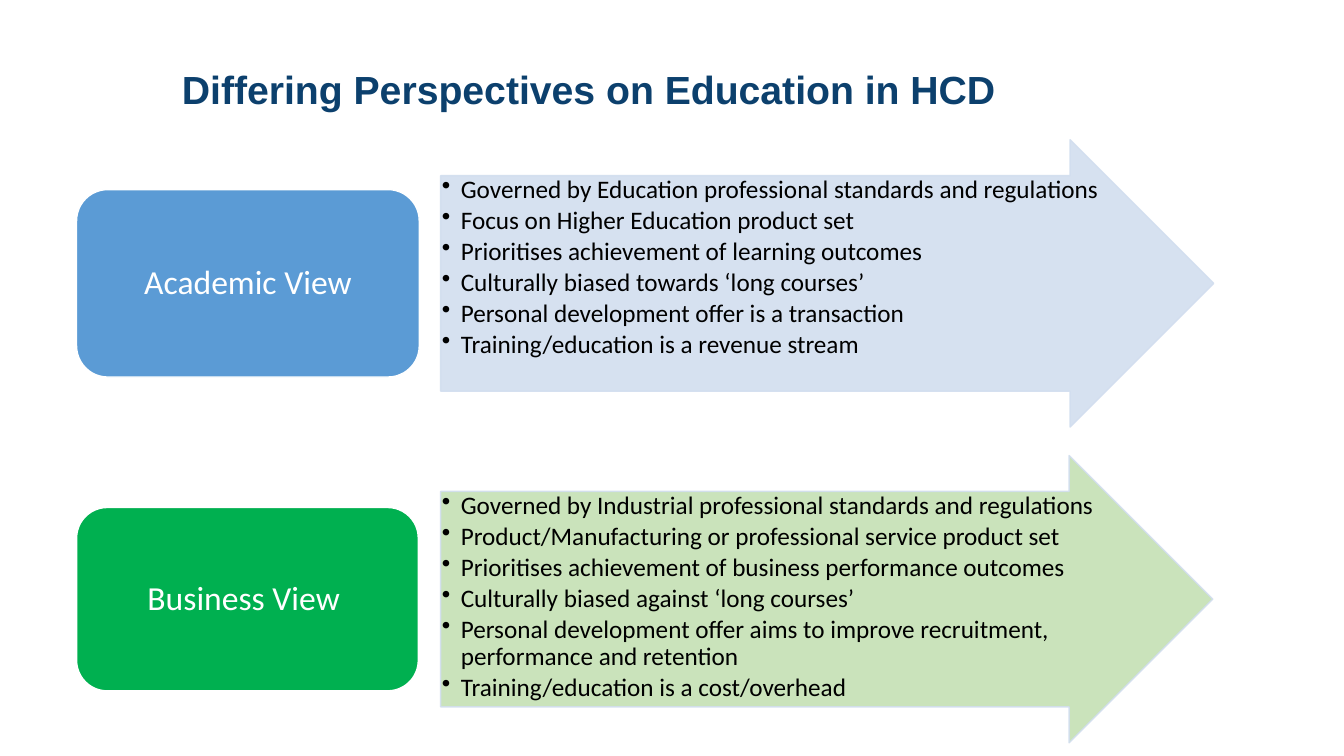
from dataclasses import dataclass

import lxml.etree
import pptx
import pptx.dml.color
import pptx.enum.shapes
import pptx.enum.text
import pptx.oxml.ns
import pptx.util

Pt = pptx.util.Pt
Kind = pptx.enum.shapes.MSO_SHAPE
Align = pptx.enum.text.PP_ALIGN
Anchor = pptx.enum.text.MSO_ANCHOR
qn = pptx.oxml.ns.qn

HUES = {
    "navy": "0C406D", "black": "000000", "white": "FFFFFF",
    "blue": "5B9BD5", "green": "00B050",
    "pale blue": "D2DEEF", "pale green": "C5E0B4",
}
LABEL_LEFT, ARROW_LEFT = 54.7, 314.8
ARROW_HIGH = 205.2
HANG = 13.5  # bullet indent


@dataclass
class View:
    name: str
    hue: str
    pale: str
    top: float
    wide: float  # arrow width
    label: tuple[float, float]  # label width and height
    points: list[str]


VIEWS = [
    View("Academic View", "blue", "pale blue", 99.8, 552.2, (244.8, 133.9), [
        "Governed by Education professional standards and regulations",
        "Focus on Higher Education product set",
        "Prioritises achievement of learning outcomes",
        "Culturally biased towards ‘long courses’",
        "Personal development offer is a transaction",
        "Training/education is a revenue stream",
    ]),
    View("Business View ", "green", "pale green", 325.4, 551.5, (244.1, 131), [
        "Governed by Industrial professional standards and regulations",
        "Product/Manufacturing or professional service product set",
        "Prioritises achievement of business performance outcomes",
        "Culturally biased against ‘long courses’",
        "Personal development offer aims to improve recruitment, "
        "performance and retention",
        "Training/education is a cost/overhead",
    ]),
]


def tint(hue: str) -> pptx.dml.color.RGBColor:
    return pptx.dml.color.RGBColor.from_string(HUES[hue])


def write(shape, lines: list[str], *, size: float, hue: str,
          font: str = "Calibri", bold: bool = False, align=Align.LEFT,
          anchor=Anchor.MIDDLE, after: float = 0, bullet: bool = False) -> None:
    """Fill a shape with one paragraph per line."""
    frame = shape.text_frame
    frame.word_wrap = True
    frame.vertical_anchor = anchor
    for i, line in enumerate(lines):
        para = frame.paragraphs[0] if i == 0 else frame.add_paragraph()
        para.alignment = align
        para.line_spacing = 0.9
        para.space_before = Pt(0)
        para.space_after = Pt(after)
        if bullet:
            para.level = 1
            props = para._p.get_or_add_pPr()
            props.set("marL", str(Pt(HANG)))
            props.set("indent", str(-Pt(HANG)))
            lxml.etree.SubElement(props, qn("a:buChar"), char="•")
        run = para.add_run()
        run.text = line
        run.font.name = font
        run.font.size = Pt(size)
        run.font.bold = bold
        run.font.color.rgb = tint(hue)


def fade(paint) -> None:
    """Make each solid colour 90% opaque."""
    for part in paint.iter(qn("a:srgbClr")):
        lxml.etree.SubElement(part, qn("a:alpha"), val="90000")


def block(slide, kind, left: float, top: float, wide: float, high: float,
          fill: str, edge: str):
    shape = slide.shapes.add_shape(kind, Pt(left), Pt(top), Pt(wide), Pt(high))
    shape.shadow.inherit = False
    shape.fill.solid()
    shape.fill.fore_color.rgb = tint(fill)
    shape.line.color.rgb = tint(edge)
    shape.line.width = Pt(1)
    return shape


def draw(slide, view: View) -> None:
    # Arrow with its bullet points
    arrow = block(slide, Kind.RIGHT_ARROW, ARROW_LEFT, view.top, view.wide,
                  ARROW_HIGH, view.pale, "pale blue")
    arrow.adjustments[0] = 0.75
    arrow.adjustments[1] = 0.5
    fade(arrow._element.spPr)
    frame = arrow.text_frame
    frame.margin_left = frame.margin_right = Pt(0.9)
    frame.margin_top = frame.margin_bottom = Pt(0.9)
    write(arrow, view.points, size=18, hue="black", anchor=Anchor.TOP,
          after=2.7, bullet=True)

    # Label, centred on the arrow's height
    wide, high = view.label
    top = view.top + (ARROW_HIGH - high) / 2
    label = block(slide, Kind.ROUNDED_RECTANGLE, LABEL_LEFT, top, wide, high,
                  view.hue, "white")
    write(label, [view.name], size=24, hue="white", align=Align.CENTER)


def main() -> None:
    deck = pptx.Presentation()
    deck.slide_width, deck.slide_height = Pt(960), Pt(540)
    slide = deck.slides.add_slide(deck.slide_layouts.get_by_name("Title Only"))

    # Title
    title = slide.shapes.title
    title.left, title.top = Pt(122.7), Pt(31.7)
    title.width, title.height = Pt(805), Pt(67.7)
    write(title, ["Differing Perspectives on Education in HCD"], size=28,
          hue="navy", font="Arial", bold=True)

    # The two views
    for view in VIEWS:
        draw(slide, view)
    deck.save("out.pptx")


if __name__ == "__main__":
    main()
